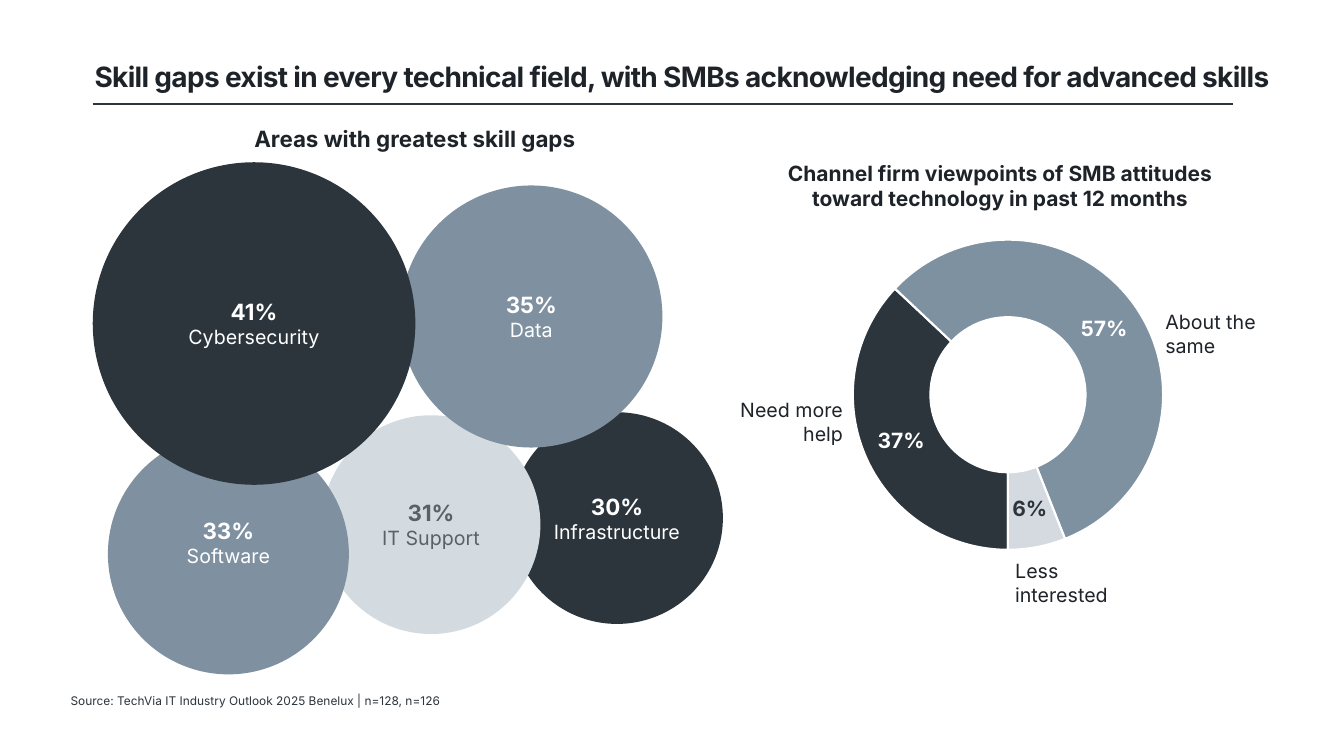
from lxml import etree
from pptx import Presentation
from pptx.chart.data import CategoryChartData
from pptx.dml.color import RGBColor
from pptx.enum.chart import XL_CHART_TYPE as CHART
from pptx.enum.shapes import MSO_CONNECTOR as CONN, MSO_SHAPE as SHAPE
from pptx.enum.text import MSO_ANCHOR as ANCHOR, PP_ALIGN as ALIGN
from pptx.oxml import parse_xml
from pptx.oxml.ns import nsdecls, qn
from pptx.util import Inches, Pt

FONT = "Inter"
DARK, INK, WHITE = "2C353C", "1D2328", "FFFFFF"
SLATE, PALE, GREY = "7F91A1", "D3DBE0", "586169"

TITLE = "Skill gaps exist in every technical field, with SMBs acknowledging need for advanced skills"
SOURCE = "Source: TechVia IT Industry Outlook 2025 Benelux | n=128, n=126"

# text, box, size, bold, alignment
LABELS = [
    ("Areas with greatest skill gaps", (1.39, 1.19, 5.45, 0.37), 16, True, ALIGN.CENTER),
    ("Channel firm viewpoints of SMB attitudes toward technology in past 12 months",
     (7.69, 1.54, 4.46, 0.61), 15, True, ALIGN.CENTER),
    ("About the same", (11.46, 3.03, 1.38, 0.57), 14, False, ALIGN.LEFT),
    ("Less interested", (9.97, 5.5, 1.38, 0.57), 14, False, ALIGN.LEFT),
    ("Need more help", (7.08, 3.9, 1.38, 0.57), 14, False, ALIGN.RIGHT),
]
# share, area, left, top, diameter, fill, text colour, bottom inset; back to front
BUBBLES = [
    ("30%", "Infrastructure", 5.07, 4.09, 2.1, DARK, WHITE, 0.05),
    ("31%", "IT Support", 3.19, 4.12, 2.17, PALE, GREY, 0.05),
    ("33%", "Software", 1.07, 4.3, 2.39, SLATE, WHITE, 0.28),
    ("35%", "Data", 3.97, 1.84, 2.6, SLATE, WHITE, 0.05),
    ("41%", "Cybersecurity", 0.92, 1.61, 3.2, DARK, WHITE, 0.05),
]
# category, value, fill, label colour
SLICES = [
    ("1", 0.37, DARK, WHITE),
    ("2", 0.57, "7E91A1", WHITE),
    ("3", 0.06, "D4DAE0", DARK),
]
CHART_BOX = (7.53, 2.18, 4.93, 3.6)
PLOT_AREA = {"x": 0.188, "y": 0.055, "w": 0.625, "h": 0.855}


def rgb(color):
    return RGBColor.from_string(color)


def inches(box):
    return [Inches(v) for v in box]


def style(font, size, color, bold=False, name=FONT):
    font.name, font.size, font.bold = name, Pt(size), bold
    font.color.rgb = rgb(color)


def write(p, text, size, color=INK, bold=False, align=ALIGN.LEFT, spacing=None):
    p.alignment = align
    r = p.add_run()
    r.text = text
    style(r.font, size, color, bold)
    if spacing is not None:
        r.font._element.set("spc", str(int(spacing * 100)))


def add_text(s, text, box, size, anchor=ANCHOR.TOP, inset=None, line=None, **fmt):
    tf = s.shapes.add_textbox(*inches(box)).text_frame
    tf.word_wrap = True
    tf.vertical_anchor = anchor
    if inset is not None:
        tf.margin_left = tf.margin_right = tf.margin_top = tf.margin_bottom = Inches(inset)
    if line:
        tf.paragraphs[0].line_spacing = line
    write(tf.paragraphs[0], text, size, **fmt)


def add_rule(s):
    rule = s.shapes.add_connector(CONN.STRAIGHT, *inches((0.92, 1.03, 12.23, 1.03)))
    rule.line.color.rgb = rgb(DARK)
    rule.line.width = Pt(1)
    etree.SubElement(rule._element.spPr, qn("a:effectLst"))


def add_bubble(s, share, area, left, top, size, fill, color, bottom):
    sp = s.shapes.add_shape(SHAPE.OVAL, *inches((left, top, size, size)))
    sp.shadow.inherit = False
    sp.fill.solid()
    sp.fill.fore_color.rgb = rgb(fill)
    sp.line.fill.background()
    tf = sp.text_frame
    tf.word_wrap = True
    tf.vertical_anchor = ANCHOR.MIDDLE
    tf.margin_left = tf.margin_right = 0
    tf.margin_bottom = Inches(bottom)
    write(tf.paragraphs[0], share, 16, color, True, ALIGN.CENTER)
    write(tf.add_paragraph(), area, 14, color, align=ALIGN.CENTER)


def add_doughnut(s):
    data = CategoryChartData(number_format="0%")
    data.categories = [name for name, *_ in SLICES]
    data.add_series("Series 1", [value for _, value, *_ in SLICES])
    chart = s.shapes.add_chart(CHART.DOUGHNUT, *inches(CHART_BOX), data).chart
    chart.has_legend = chart.has_title = False
    style(chart.font, 11, GREY, name="Roboto")

    plot = chart.plots[0]
    plot.vary_by_categories = True
    series = plot.series[0]
    for i, (_, _, fill, color) in enumerate(SLICES):
        point = series.points[i]
        point.format.fill.solid()
        point.format.fill.fore_color.rgb = rgb(fill)
        point.format.line.color.rgb = rgb(WHITE)
        point.format.line.width = Pt(1.5)
        style(point.data_label.font, 15, color, True)
    labels = series.data_labels
    labels.show_value = True
    labels.number_format = "0%"
    labels.number_format_is_linked = False
    style(labels.font, 15, WHITE, True)

    area = chart._chartSpace.chart.plotArea
    for tag, value in (("c:firstSliceAng", 180), ("c:holeSize", 54)):
        next(area.iter(qn(tag))).set("val", str(value))
    for old in area.findall(qn("c:layout")):
        area.remove(old)
    modes = "".join(f'<c:{k}Mode val="edge"/>' for k in "xy")
    sizes = "".join(f'<c:{k} val="{v}"/>' for k, v in PLOT_AREA.items())
    area.insert(0, parse_xml(
        f'<c:layout {nsdecls("c")}><c:manualLayout><c:layoutTarget val="inner"/>'
        f"{modes}{sizes}</c:manualLayout></c:layout>"))


def main():
    prs = Presentation()
    prs.slide_width, prs.slide_height = Inches(13.33), Inches(7.5)
    s = prs.slides.add_slide(prs.slide_layouts[6])
    add_text(s, TITLE, (0.84, 0.43, 11.9, 0.7), 20, ANCHOR.MIDDLE, line=0.9,
             bold=True, spacing=-0.5)
    add_rule(s)
    for bubble in BUBBLES:
        add_bubble(s, *bubble)
    add_text(s, SOURCE, (0.7, 6.85, 7, 0.2), 8.5, ANCHOR.MIDDLE, inset=0, color=DARK)
    add_doughnut(s)
    for text, box, size, bold, align in LABELS:
        add_text(s, text, box, size, bold=bold, align=align)
    prs.save("out.pptx")


if __name__ == "__main__":
    main()
